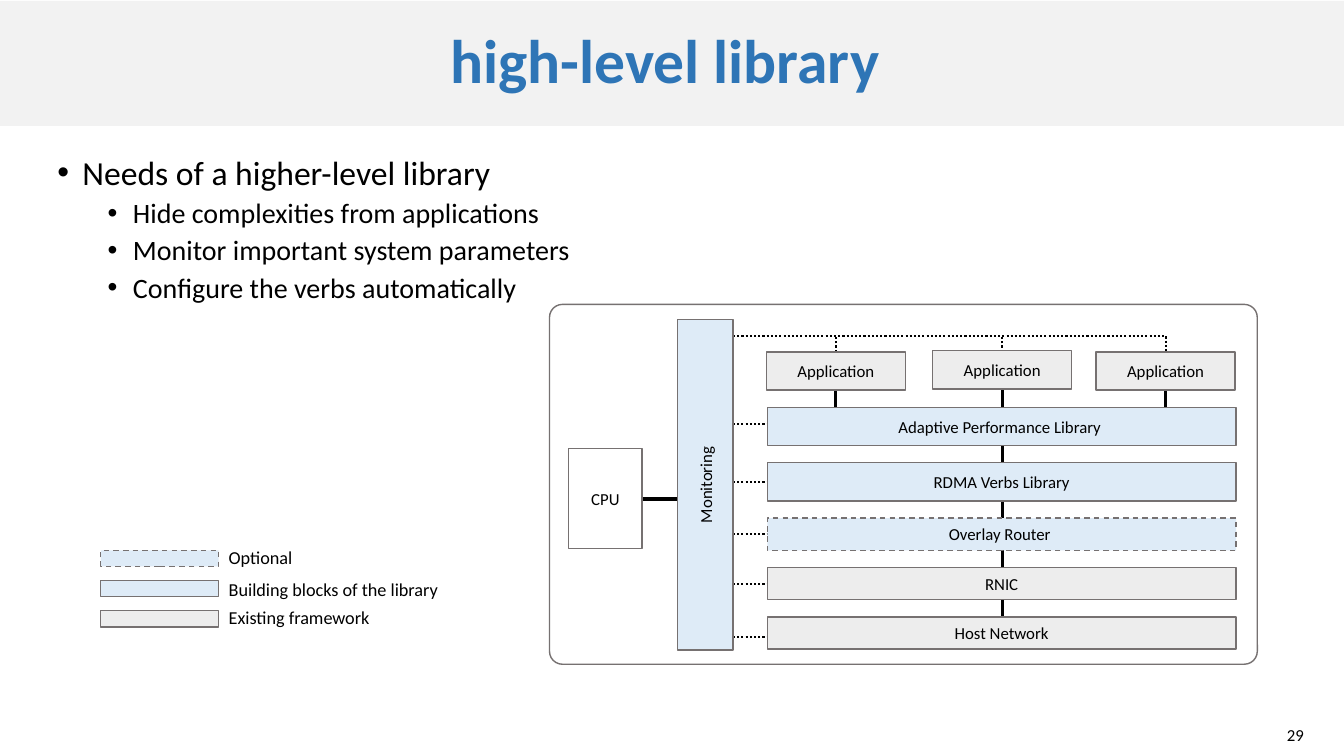
from dataclasses import dataclass
from lxml.etree import SubElement
from pptx import Presentation
from pptx.dml.color import RGBColor as RGB
from pptx.enum.dml import MSO_LINE as Dash
from pptx.enum.shapes import MSO_CONNECTOR as Link, MSO_SHAPE as Shape
from pptx.enum.text import MSO_ANCHOR as Anchor, MSO_AUTO_SIZE as Fit, PP_ALIGN as Align
from pptx.oxml.ns import qn
from pptx.util import Inches, Pt


@dataclass(frozen=True)
class Theme:
    font: str = "Calibri"
    title: RGB = RGB(0x2E, 0x75, 0xB6)
    ink: RGB = RGB(0, 0, 0)
    band: RGB = RGB(0xF2, 0xF2, 0xF2)
    edge: RGB = RGB(0x76, 0x71, 0x71)
    white: RGB = RGB(0xFF, 0xFF, 0xFF)
    blue: RGB = RGB(0xDE, 0xEB, 0xF7)
    grey: RGB = RGB(0xED, 0xED, 0xED)
    head: int = 44
    lead: int = 24
    point: int = 20
    key: int = 13
    small: int = 12


theme = Theme()
deck = Presentation()
deck.slide_width, deck.slide_height = Inches(13.33), Inches(7.5)
slide = deck.slides.add_slide(deck.slide_layouts[6])
shapes = slide.shapes


def say(para, text, size, color=theme.ink, align=Align.LEFT):
    """Add one styled run to a paragraph."""
    para.alignment = align
    run = para.add_run()
    run.text = text
    run.font.name, run.font.size = theme.font, Pt(size)
    run.font.color.rgb = color
    return run


def block(box, fill, text="", dash=False, kind=Shape.RECTANGLE):
    """Draw an edged box with an optional centred label."""
    shape = shapes.add_shape(kind, *map(Inches, box))
    shape.shadow.inherit = False
    shape.fill.solid()
    shape.fill.fore_color.rgb = fill
    shape.line.color.rgb = theme.edge
    shape.line.width = Pt(1)
    if dash:
        shape.line.dash_style = Dash.DASH
    frame = shape.text_frame
    frame.vertical_anchor = Anchor.MIDDLE
    if text:
        say(frame.paragraphs[0], text, theme.small, align=Align.CENTER)
    return shape


# Title band
band = block((0, 0.01, 13.33, 1.24), theme.band)
band.line.fill.background()
para = band.text_frame.paragraphs[0]
para.line_spacing = 0.9
say(para, "high-level library ", theme.head, theme.title, Align.CENTER).font.bold = True

# Bullets
body = shapes.add_textbox(Inches(0.47), Inches(1.5), Inches(12.36), Inches(4.83)).text_frame
body.word_wrap = True
points = [
    (0, "Needs of a higher-level library"),
    (1, "Hide complexities from applications"),
    (1, "Monitor important system parameters"),
    (1, "Configure the verbs automatically"),
]
for row, (level, text) in enumerate(points):
    para = body.add_paragraph() if row else body.paragraphs[0]
    para.level, para.line_spacing = level, 0.9
    para.space_before = Pt(5 if level else 12)
    props = para._p.get_or_add_pPr()
    props.set("marL", str(Inches(0.25 + 0.5 * level)))
    props.set("indent", str(Inches(-0.25)))
    SubElement(props, qn("a:buFont"), typeface="Arial")
    SubElement(props, qn("a:buChar"), char="•")
    say(para, text, theme.point if level else theme.lead)

# Page number
page = shapes.add_textbox(Inches(11.96), Inches(7.14), Inches(1.07), Inches(0.3)).text_frame
page.word_wrap = True
page.vertical_anchor = Anchor.MIDDLE
say(page.paragraphs[0], "29", theme.small, align=Align.RIGHT)

# Diagram frame
outer = block((5.45, 3.02, 7.02, 3.57), theme.white, kind=Shape.ROUNDED_RECTANGLE)
outer.adjustments[0] = 0.036

# Links, drawn behind the blocks: x1, y1, x2, y2, dotted
links = [
    (8.29, 3.64, 8.29, 4.21, False),
    (9.94, 3.86, 9.94, 6.11, False),
    (11.56, 3.69, 11.56, 4.25, False),
    (6.37, 4.95, 6.71, 4.95, False),
    (7.27, 3.33, 11.56, 3.49, True),
]
links += [(x, 3.49, x, 3.33, True) for x in (8.29, 9.94)]
links += [(7.27, y, 7.61, y, True) for y in (4.21, 4.78, 5.3, 5.79, 6.32)]
for x1, y1, x2, y2, dotted in links:
    bent = x1 != x2 and y1 != y2
    kind = Link.ELBOW if bent else Link.STRAIGHT
    link = shapes.add_connector(kind, *map(Inches, (x1, y1, x2, y2)))
    link.line.color.rgb = theme.ink
    link.line.width = Pt(1.5 if dotted else 2.25)
    if dotted:
        link.line.dash_style = Dash.ROUND_DOT
    props = link._element.spPr
    SubElement(props, qn("a:effectLst"))
    if bent:
        props.find(qn("a:prstGeom")).set("prst", "bentConnector2")

# Blocks
block((5.64, 4.45, 0.73, 0.99), theme.white, "CPU")
watch = block((6.72, 3.17, 0.55, 3.28), theme.blue, "Monitoring")
watch.text_frame._txBody.bodyPr.set("vert", "vert270")
for x, y in ((7.6, 3.49), (9.25, 3.48), (10.87, 3.49)):
    block((x, y, 1.38, 0.38), theme.grey, "Application")
layers = [
    (4.04, 0.38, theme.blue, "Adaptive Performance Library ", False),
    (4.59, 0.38, theme.blue, "RDMA Verbs Library", False),
    (5.14, 0.32, theme.blue, "Overlay Router ", True),
    (5.63, 0.32, theme.grey, "RNIC", False),
    (6.12, 0.32, theme.grey, "Host Network", False),
]
for y, high, fill, text, dash in layers:
    block((7.61, y, 4.65, high), fill, text, dash)

# Legend
legend = [
    (5.37, 0.84, theme.blue, "Optional", True),
    (5.69, 2.35, theme.blue, "Building blocks of the library", False),
    (5.97, 1.66, theme.grey, "Existing framework", False),
]
for row, (y, wide, fill, text, dash) in enumerate(legend):
    block((1, 5.46 + 0.3 * row, 1.17, 0.16), fill, dash=dash)
    label = shapes.add_textbox(Inches(2.17), Inches(y), Inches(wide), Inches(0.32)).text_frame
    label.word_wrap = False
    label.auto_size = Fit.SHAPE_TO_FIT_TEXT
    say(label.paragraphs[0], text, theme.key)

deck.save("out.pptx")
